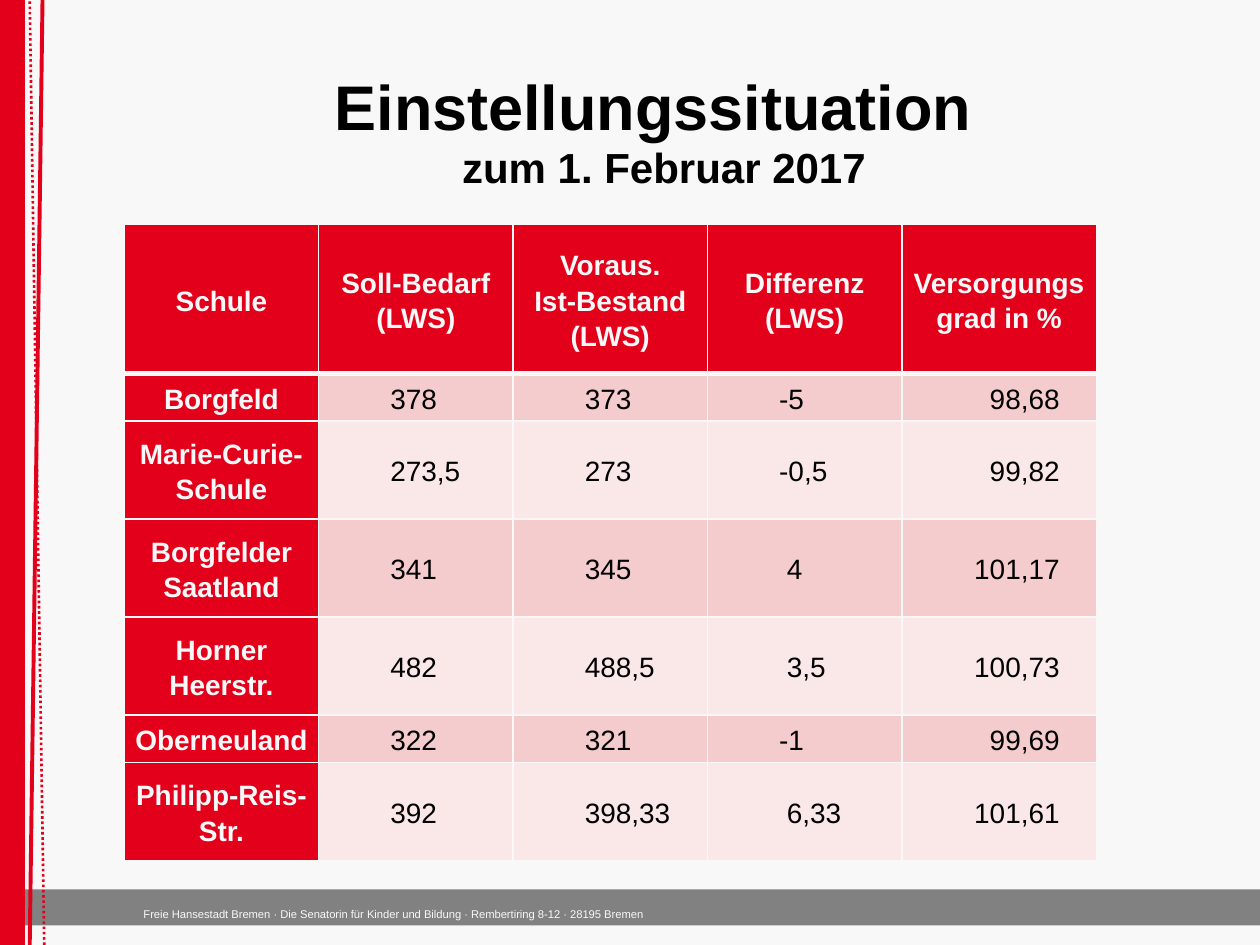
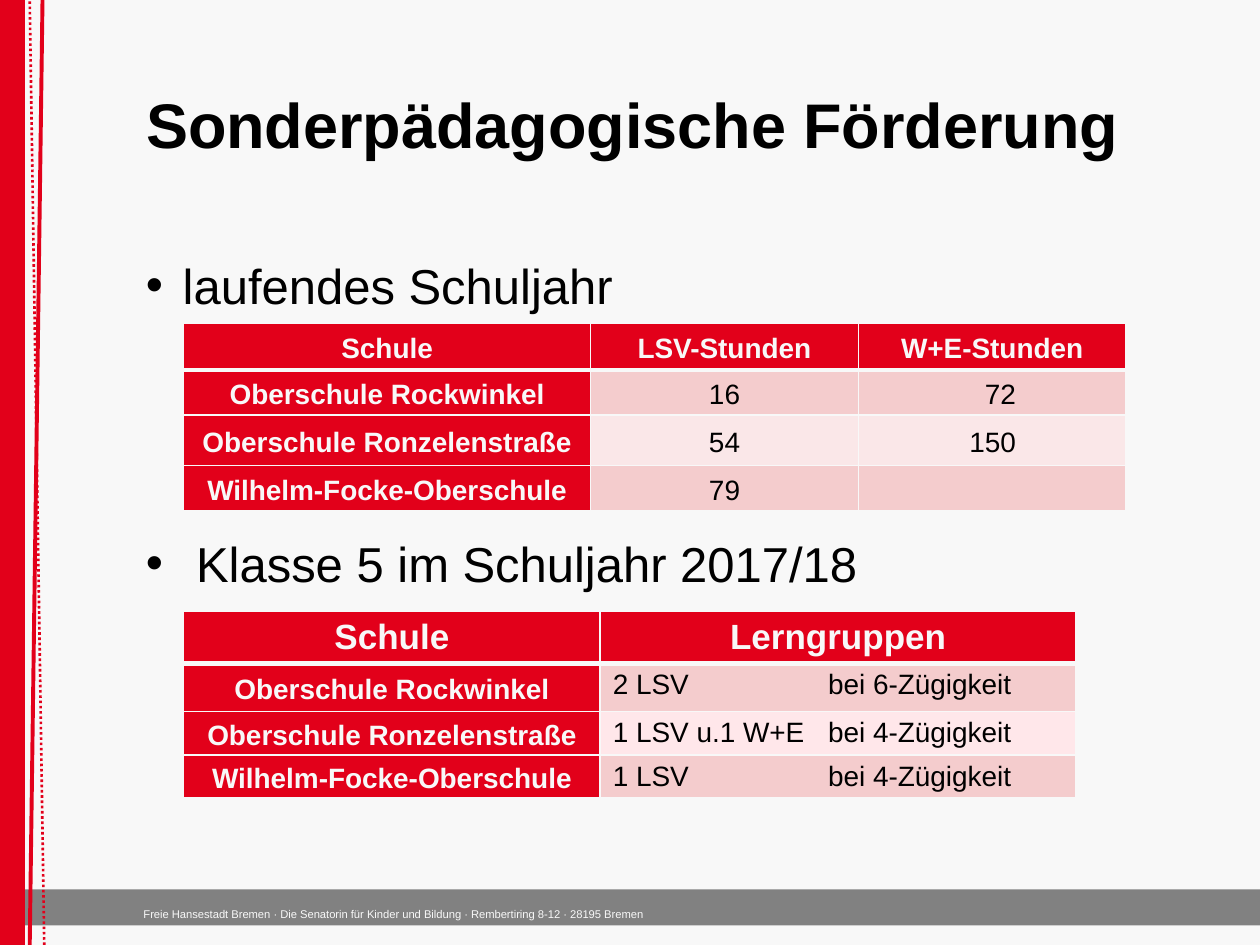
from dataclasses import dataclass

from lxml.etree import SubElement
from pptx import Presentation
from pptx.dml.color import RGBColor
from pptx.enum.dml import MSO_LINE
from pptx.enum.shapes import MSO_CONNECTOR, MSO_SHAPE
from pptx.enum.text import MSO_ANCHOR, MSO_AUTO_SIZE, PP_ALIGN
from pptx.oxml.ns import qn
from pptx.util import Pt

COLORS = {
    "paper": "F8F8F8",
    "red": "E2001A",
    "band": "333333",
    "ink": "000000",
    "rose": "F4CCCD",
    "pale": "FAE7E8",
    "blush": "FFE7EA",
}
FONT = "Arial"
SLIDE_WIDTH, SLIDE_HEIGHT = 720, 540
TITLE_BOX = (76.3, 31.7, 606.2, 83.5)
FOOTER = (
    "Freie Hansestadt Bremen · Die Senatorin für Kinder und Bildung"
    " · Rembertiring 8-12 · 28195 Bremen"
)


@dataclass
class ColumnStyle:
    align: PP_ALIGN = PP_ALIGN.CENTER
    left: float = 5
    right: float = 5
    top: float = 0
    anchor: MSO_ANCHOR = MSO_ANCHOR.MIDDLE
    spacing: float = 1.15
    hanging_minus: float = 0
    tab: float = 0


CENTERED = ColumnStyle()


def color(name):
    return RGBColor.from_string(COLORS[name])


def points(*lengths):
    return [Pt(length) for length in lengths]


def add_run(paragraph, text, size, color_name="ink", bold=False):
    run = paragraph.add_run()
    run.text = text
    run.font.name = FONT
    run.font.size = Pt(size)
    run.font.bold = bold
    run.font.color.rgb = color(color_name)


def set_margins(target, left=0, top=0, right=0, bottom=0):
    target.margin_left, target.margin_top = points(left, top)
    target.margin_right, target.margin_bottom = points(right, bottom)


def add_block(slide, box, color_name):
    shape = slide.shapes.add_shape(MSO_SHAPE.RECTANGLE, *points(*box))
    shape.shadow.inherit = False
    shape.fill.solid()
    shape.fill.fore_color.rgb = color(color_name)
    shape.line.fill.background()
    return shape


def add_red_line(slide, start, end, width, dash=None):
    line = slide.shapes.add_connector(MSO_CONNECTOR.STRAIGHT, *points(*start, *end))
    line.line.color.rgb = color("red")
    line.line.width = Pt(width)
    if dash:
        line.line.dash_style = dash
    SubElement(line._element.spPr, qn("a:effectLst"))


def add_footer(slide, box):
    band = add_block(slide, box, "band")
    fill_color = band._element.spPr.find(qn("a:solidFill"))[0]
    SubElement(fill_color, qn("a:alpha")).set("val", "60000")
    frame = band.text_frame
    set_margins(frame, left=82, right=7.2, bottom=2.5)
    frame.vertical_anchor = MSO_ANCHOR.BOTTOM
    paragraph = frame.paragraphs[0]
    paragraph.alignment = PP_ALIGN.LEFT
    add_run(paragraph, FOOTER, 6.4, "paper")


def add_left_edge(slide, box):
    left, top, width, height = box
    bottom = top + height
    add_red_line(slide, (left + 24.3, top), (left + 17, bottom), 2.25)
    add_block(slide, (left, top, 14.2, height), "red")
    add_red_line(slide, (left + 25.3, bottom), (left + 17, top), 1.5, MSO_LINE.ROUND_DOT)


def add_title(slide, box, lines, align):
    title = slide.shapes.title
    title.left, title.top, title.width, title.height = points(*box)
    frame = title.text_frame
    frame.auto_size = MSO_AUTO_SIZE.NONE
    frame.vertical_anchor = MSO_ANCHOR.MIDDLE
    paragraph = frame.paragraphs[0]
    paragraph.alignment = align
    paragraph.line_spacing = 0.9
    for index, (text, size) in enumerate(lines):
        if index:
            add_run(paragraph, " ", 44, bold=True)
            paragraph.add_line_break()
        add_run(paragraph, text, size, bold=True)


def start_slide(presentation, title_lines, title_align):
    slide = presentation.slides.add_slide(presentation.slide_layouts[5])
    add_footer(slide, (0, 508.2, SLIDE_WIDTH, 20.6))
    add_left_edge(slide, (0, 0, 27, SLIDE_HEIGHT))
    add_title(slide, TITLE_BOX, title_lines, title_align)
    return slide


def set_borders(cell, top, bottom):
    properties = cell._tc.get_or_add_tcPr()
    for side, width in (("L", 1), ("R", 1), ("T", top), ("B", bottom)):
        border = SubElement(properties, qn(f"a:ln{side}"), w=str(Pt(width)))
        fill = SubElement(border, qn("a:solidFill"))
        SubElement(fill, qn("a:srgbClr"), val=COLORS["paper"])


def add_tab_stop(paragraph, position):
    tabs = SubElement(paragraph._p.get_or_add_pPr(), qn("a:tabLst"))
    SubElement(tabs, qn("a:tab"), pos=str(Pt(position)), algn="l")


def fill_cell(cell, text, style, fill_name, size, is_label):
    cell.fill.solid()
    cell.fill.fore_color.rgb = color(fill_name)
    positive = text and not text.startswith("-")
    left = style.left + (style.hanging_minus if positive else 0)
    set_margins(cell, left, style.top, style.right)
    cell.vertical_anchor = style.anchor
    paragraph = cell.text_frame.paragraphs[0]
    paragraph.alignment = style.align
    paragraph.line_spacing = style.spacing
    if style.tab:
        add_tab_stop(paragraph, style.tab)
    for index, line in enumerate(text.split("\n")):
        if index:
            paragraph.add_line_break()
        if line:
            add_run(paragraph, line, size, "paper" if is_label else "ink", is_label)


def add_school_table(slide, origin, widths, heights, rows, styles,
                     stripes=("rose", "pale"), header_size=16, header_spacing=1.15):
    box = (*origin, sum(widths), sum(heights))
    table = slide.shapes.add_table(len(rows), len(widths), *points(*box)).table
    table.horz_banding = False
    for column, width in zip(table.columns, widths):
        column.width = Pt(width)
    for row, height in zip(table.rows, heights):
        row.height = Pt(height)
    header_style = ColumnStyle(spacing=header_spacing)
    for row_index, texts in enumerate(rows):
        is_header = row_index == 0
        for column_index, text in enumerate(texts):
            cell = table.cell(row_index, column_index)
            is_label = is_header or column_index == 0
            set_borders(cell, 3 if row_index == 1 else 1, 3 if is_header else 1)
            fill_cell(
                cell,
                text,
                header_style if is_header else styles[column_index],
                "red" if is_label else stripes[(row_index - 1) % 2],
                header_size if is_header else 16,
                is_label,
            )


def add_bullets(slide, box, items):
    frame = slide.shapes.add_textbox(*points(*box)).text_frame
    frame.word_wrap = True
    set_margins(frame, 7.2, 6, 7.2, 3.6)
    for index, (text, indent, space_before) in enumerate(items):
        paragraph = frame.add_paragraph() if index else frame.paragraphs[0]
        if space_before:
            paragraph.space_before = Pt(space_before)
        properties = paragraph._p.get_or_add_pPr()
        properties.set("marL", str(Pt(indent)))
        properties.set("indent", str(Pt(-indent)))
        SubElement(properties, qn("a:buFont"), typeface=FONT)
        SubElement(properties, qn("a:buChar"), char="•")
        add_run(paragraph, text, 28)


def build_staffing_slide(presentation):
    slide = start_slide(
        presentation,
        [("Einstellungssituation", 36), ("zum 1. Februar 2017", 24)],
        PP_ALIGN.CENTER,
    )
    rows = [
        ("Schule", "Soll-Bedarf (LWS)", "Voraus.\nIst-Bestand (LWS)",
         "Differenz (LWS)", "Versorgungsgrad in %"),
        ("Borgfeld", "378", "373", "-5", "98,68"),
        ("Marie-Curie-Schule", "273,5", "273", "-0,5", "99,82"),
        ("Borgfelder Saatland", "341", "345", "4", "101,17"),
        ("Horner Heerstr.", "482", "488,5", "3,5", "100,73"),
        ("Oberneuland", "322", "321", "-1", "99,69"),
        ("Philipp-Reis-Str.", "392", "398,33", "6,33", "101,61"),
    ]
    amount = ColumnStyle(PP_ALIGN.LEFT, left=41)
    difference = ColumnStyle(PP_ALIGN.LEFT, left=41, hanging_minus=4.4)
    percentage = ColumnStyle(PP_ALIGN.RIGHT, right=21)
    single, double = 27.2, 56
    add_school_table(
        slide, (71, 128.4), [111.1] * 5,
        [85, single, double, double, double, single, double],
        rows, [CENTERED, amount, amount, difference, percentage],
    )


def build_support_slide(presentation):
    slide = start_slide(
        presentation, [("Sonderpädagogische Förderung", 36)], PP_ALIGN.LEFT
    )
    add_bullets(slide, (76.3, 140, 606.2, 351), [
        ("laufendes Schuljahr", 21, 0),
        ("Klasse 5 im Schuljahr 2017/18", 28.7, 125),
    ])
    schools = (
        "Oberschule Rockwinkel",
        "Oberschule Ronzelenstraße",
        "Wilhelm-Focke-Oberschule",
    )
    hours = [("16", "72"), ("54", "150"), ("79", "")]
    groups = ["2 LSV\tbei 6-Zügigkeit", "1 LSV u.1 W+E\tbei 4-Zügigkeit",
              "1 LSV\tbei 4-Zügigkeit"]
    add_school_table(
        slide, (105, 185), [232.5, 153, 153], [26.5, 25.7, 29, 25.7],
        [("Schule", "LSV-Stunden", "W+E-Stunden")]
        + [(school, *values) for school, values in zip(schools, hours)],
        [CENTERED, CENTERED, ColumnStyle(PP_ALIGN.RIGHT, right=63)],
    )
    group_style = ColumnStyle(
        PP_ALIGN.LEFT, left=7.2, top=3.6, anchor=MSO_ANCHOR.TOP, spacing=1, tab=123
    )
    add_school_table(
        slide, (105, 349.5), [238, 272], [29.5, 27.5, 25, 24.5],
        [("Schule", "Lerngruppen"), *zip(schools, groups)],
        [CENTERED, group_style], ("rose", "blush"), 20, 1,
    )


def main():
    presentation = Presentation()
    presentation.slide_width, presentation.slide_height = points(SLIDE_WIDTH, SLIDE_HEIGHT)
    background = presentation.slide_master.background.fill
    background.solid()
    background.fore_color.rgb = color("paper")
    build_staffing_slide(presentation)
    build_support_slide(presentation)
    presentation.save("out.pptx")


if __name__ == "__main__":
    main()
